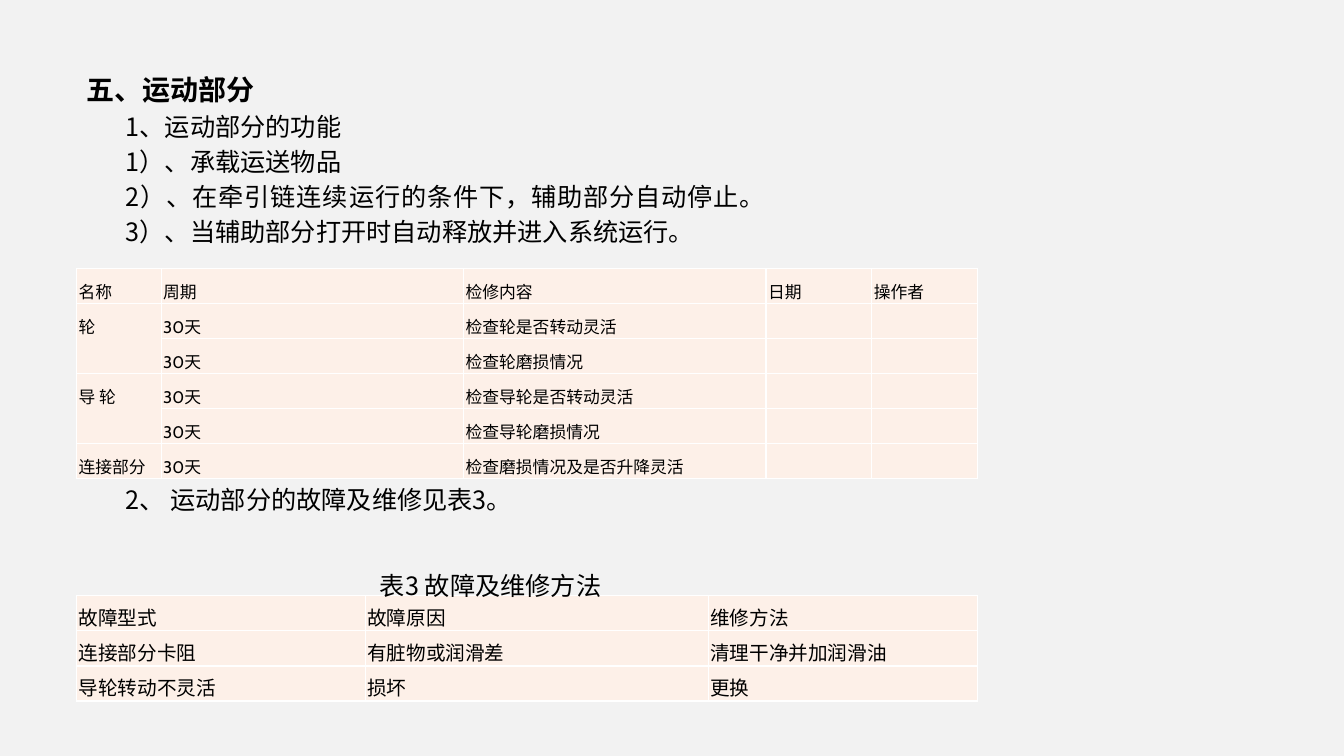
"""Build the maintenance slide for the moving parts: text, check table and fault table."""
from lxml import etree
from pptx import Presentation
from pptx.dml.color import RGBColor
from pptx.enum.text import MSO_ANCHOR, MSO_AUTO_SIZE as AUTO_SIZE, PP_ALIGN as ALIGN
from pptx.oxml import parse_xml
from pptx.oxml.ns import nsdecls, qn
from pptx.util import Pt

COLORS = {"background": "F2F2F2", "text": "000000", "cell": "FDF0E8", "border": "FFFFFF"}
CJK_FONT = "Noto Sans CJK SC"
LEFT, ROW_HEIGHT = 54.7, 25


def format_paragraph(paragraph, size, name=CJK_FONT, bold=False, indent=0,
                     align=ALIGN.JUSTIFY, spacing=Pt(ROW_HEIGHT)):
    paragraph.alignment = align
    paragraph.line_spacing = spacing
    paragraph.space_before = paragraph.space_after = Pt(0)
    font = paragraph.font
    font.size, font.name, font.bold = Pt(size), name, bold
    font.color.rgb = RGBColor.from_string(COLORS["text"])
    properties = paragraph._p.get_or_add_pPr()
    properties.set("marL", "0")
    properties.set("indent", str(Pt(indent)))
    east_asian = etree.SubElement(properties.find(qn("a:defRPr")), qn("a:ea"))
    east_asian.set("typeface", CJK_FONT)


def add_text(slide, left, top, height, lines, **style):
    box = slide.shapes.add_textbox(Pt(left), Pt(top), Pt(481), Pt(height))
    frame = box.text_frame
    frame.word_wrap = True
    frame.auto_size = AUTO_SIZE.SHAPE_TO_FIT_TEXT
    frame.text = "\n".join(lines)
    for paragraph in frame.paragraphs:
        format_paragraph(paragraph, 18, **style)


presentation = Presentation()
presentation.slide_width, presentation.slide_height = Pt(960), Pt(540)
slide = presentation.slides.add_slide(presentation.slide_layouts[5])
slide.background.fill.solid()
slide.background.fill.fore_color.rgb = RGBColor.from_string(COLORS["background"])

title = slide.shapes.title
title.left, title.top, title.width, title.height = Pt(LEFT), Pt(47.5), Pt(481), Pt(32.2)
title.text_frame.text = "五、运动部分"
title.text_frame.vertical_anchor = MSO_ANCHOR.TOP
title.text_frame.auto_size = AUTO_SIZE.NONE
format_paragraph(title.text_frame.paragraphs[0], 20, bold=True)

add_text(slide, LEFT, 72.5, 107.2, [
    "1、运动部分的功能",
    "1）、承载运送物品",
    "2）、在牵引链连续运行的条件下，辅助部分自动停止。",
    "3）、当辅助部分打开时自动释放并进入系统运行。",
], indent=28)
add_text(slide, LEFT, 339.1, 32.2, ["2、 运动部分的故障及维修见表3。"], indent=28)

check_rows = [
    ["名称", "周期", "检修内容", "日期", "操作者"],
    ["轮", "30天", "检查轮是否转动灵活", "", ""],
    [None, "30天", "检查轮磨损情况", "", ""],
    ["导 轮", "30天", "检查导轮是否转动灵活", "", ""],
    [None, "30天", "检查导轮磨损情况", "", ""],
    ["连接部分", "30天", "检查磨损情况及是否升降灵活", "", ""],
]
fault_rows = [
    ["故障型式", "故障原因", "维修方法"],
    ["连接部分卡阻", "有脏物或润滑差", "清理干净并加润滑油"],
    ["导轮转动不灵活", "损坏", "更换"],
]
tables = [
    (191.5, 12, [60.5, 216, 216, 75.6, 75.6], check_rows),
    (425.6, 14, [206.2, 245, 192.5], fault_rows),
]
for top, size, widths, rows in tables:
    frame = slide.shapes.add_table(len(rows), len(widths), Pt(LEFT), Pt(top),
                                   Pt(sum(widths)), Pt(ROW_HEIGHT * len(rows)))
    table = frame.table
    table.first_row = table.horz_banding = False
    for column, width in zip(table.columns, widths):
        column.width = Pt(width)
    for row_index, row in enumerate(rows):
        table.rows[row_index].height = Pt(ROW_HEIGHT)
        for column_index, text in enumerate(row):
            cell = table.cell(row_index, column_index)
            cell.margin_left = cell.margin_right = Pt(1.4)
            cell.margin_top = cell.margin_bottom = Pt(0)
            cell.fill.solid()
            cell.fill.fore_color.rgb = RGBColor.from_string(COLORS["cell"])
            for position, side in enumerate(["lnL", "lnR", "lnT", "lnB"]):
                cell._tc.get_or_add_tcPr().insert(position, parse_xml(
                    f'<a:{side} {nsdecls("a")} w="{Pt(1)}"><a:solidFill>'
                    f'<a:srgbClr val="{COLORS["border"]}"/></a:solidFill></a:{side}>'))
            if text is None:
                table.cell(row_index - 1, column_index).merge(cell)
                continue
            cell.text = text
            format_paragraph(cell.text_frame.paragraphs[0], size, name="Cabin")

add_text(slide, 97.9, 382.3, 41.8, ["表3 故障及维修方法"],
         indent=24, align=ALIGN.CENTER, spacing=2.0)

presentation.save("out.pptx")
